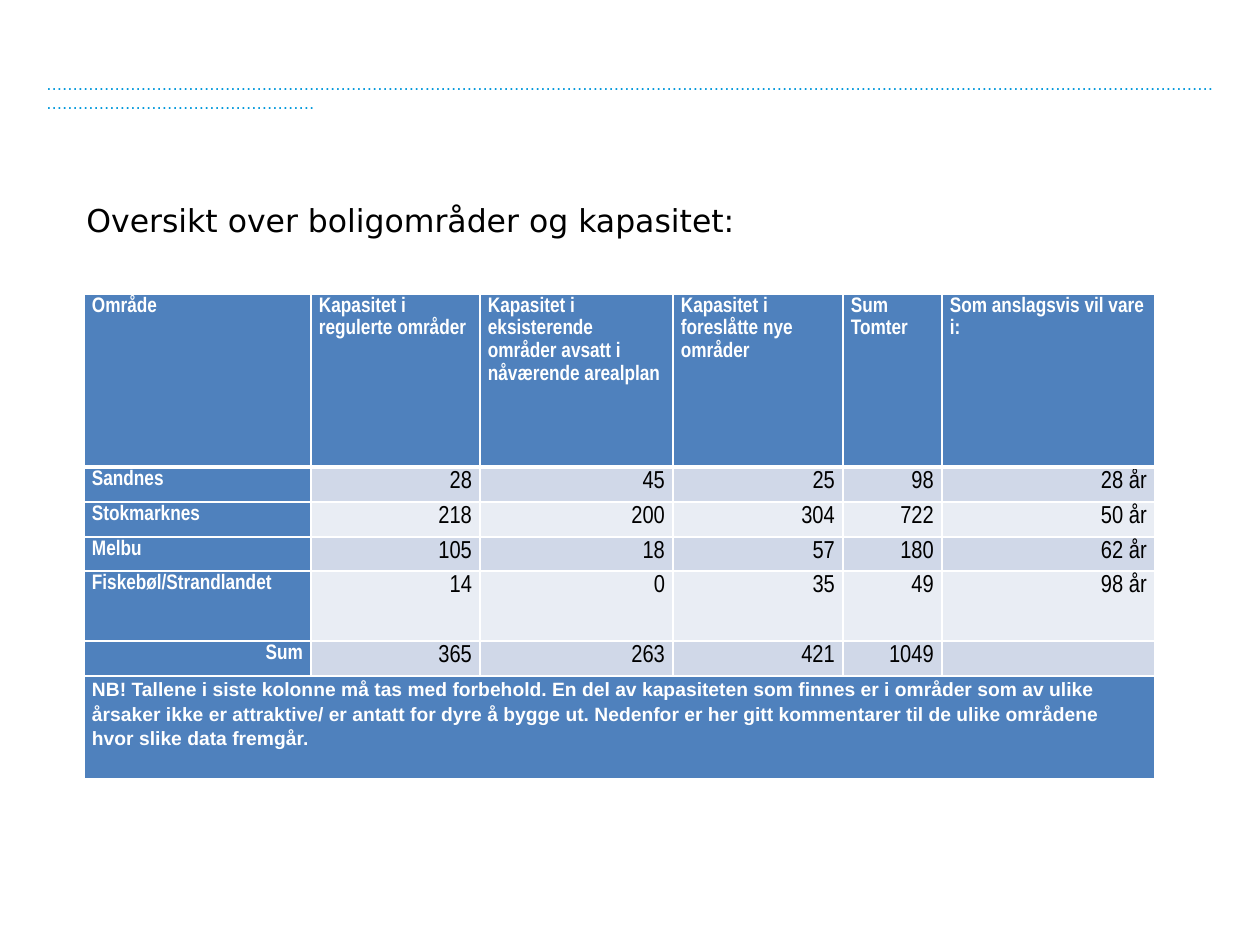
from lxml.etree import SubElement
from pptx import Presentation
from pptx.dml.color import RGBColor
from pptx.enum.text import MSO_ANCHOR, MSO_AUTO_SIZE, PP_ALIGN
from pptx.oxml.ns import qn
from pptx.util import Pt

SCALE = 914400 / 126
HEX = {"dots": "0098DB", "black": "000000", "white": "FFFFFF",
       "blue": "4F81BD", "dark": "D0D8E8", "light": "E9EDF4"}
COLS = [227, 169, 193, 170, 99, 213]
ROWS = [173, 35, 35, 34, 70, 35, 103]
DATA = [
    ["Område", "Kapasitet i regulerte områder",
     "Kapasitet i eksisterende områder avsatt i nåværende arealplan",
     "Kapasitet i foreslåtte nye områder", "Sum\nTomter",
     "Som anslagsvis vil vare i:"],
    ["Sandnes", "28", "45", "25", "98", "28 år"],
    ["Stokmarknes", "218", "200", "304", "722", "50 år"],
    ["Melbu", "105", "18", "57", "180", "62 år"],
    ["Fiskebøl/Strandlandet", "14", "0", "35", "49", "98 år"],
    ["Sum", "365", "263", "421", "1049", ""],
]
NOTE = ("NB! Tallene i siste kolonne må tas med forbehold. En del av kapasiteten "
        "som finnes er i områder som av ulike årsaker ikke er attraktive/ er antatt "
        "for dyre å bygge ut. Nedenfor er her gitt kommentarer til de ulike områdene "
        "hvor slike data fremgår.")


def px(num):
    return round(num * SCALE)


def color(name):
    return RGBColor.from_string(HEX[name])


def style(frame, size, face, tint, bold=False):
    for para in frame.paragraphs:
        for run in para.runs:
            font = run.font
            font.size, font.name, font.bold = Pt(size), face, bold
            font.color.rgb = color(tint)


def add_text(slide, box, text, size, tint, anchor):
    frame = slide.shapes.add_textbox(*map(px, box)).text_frame
    frame.word_wrap = True
    frame.auto_size = MSO_AUTO_SIZE.SHAPE_TO_FIT_TEXT
    frame.vertical_anchor = anchor
    frame.text = text
    style(frame, size, "DejaVu Sans", tint)


def add_edges(cell, top, bottom):
    props = cell._tc.get_or_add_tcPr()
    for side, width in zip("LRTB", (1, 1, top, bottom)):
        line = SubElement(props, qn("a:ln" + side), w=str(Pt(width)))
        fill = SubElement(line, qn("a:solidFill"))
        SubElement(fill, qn("a:srgbClr"), val=HEX["white"])


def fill_cell(cell, text, fill, size, face, tint, bold, align):
    cell.margin_left = cell.margin_right = px(8)
    cell.margin_top = cell.margin_bottom = 0
    cell.fill.solid()
    cell.fill.fore_color.rgb = color(fill)
    frame = cell.text_frame
    frame.text = text
    for para in frame.paragraphs:
        para.alignment = align
        para.line_spacing = 1.15
        if not text:
            SubElement(para._p, qn("a:endParaRPr"), sz=str(size * 100))
    style(frame, size, face, tint, bold)


def add_grid(slide, box):
    shape = slide.shapes.add_table(len(ROWS), len(COLS), *map(px, box))
    table = shape.table
    for col, width in zip(table.columns, COLS):
        col.width = px(width)
    for row, height in zip(table.rows, ROWS):
        row.height = px(height)
    last = len(ROWS) - 1
    for i in range(len(ROWS)):
        for j in range(len(COLS)):
            add_edges(table.cell(i, j), 3 if i == 1 else 1, 3 if i == 0 else 1)
    for i, row in enumerate(DATA):
        for j, text in enumerate(row):
            head = i == 0 or j == 0
            align = PP_ALIGN.LEFT if head and text != "Sum" else PP_ALIGN.RIGHT
            band = "dark" if i % 2 else "light"
            look = ("blue", 12, "Arial Narrow", "white") if head else (
                band, 14, "Arial Narrow", "black")
            fill_cell(table.cell(i, j), text, *look, head, align)
    note = table.cell(last, 0)
    note.merge(table.cell(last, len(COLS) - 1))
    fill_cell(note, NOTE, "blue", 11, "Arial", "white", True, PP_ALIGN.LEFT)


def main():
    deck = Presentation()
    deck.slide_width, deck.slide_height = px(1260), px(945)
    slide = deck.slides.add_slide(deck.slide_layouts[6])
    add_text(slide, (34, 69, 1201, 32), "…" * 91, 9, "dots", MSO_ANCHOR.TOP)
    add_text(slide, (74, 195, 1142, 50), "Oversikt over boligområder og kapasitet:",
             18, "black", MSO_ANCHOR.MIDDLE)
    add_grid(slide, (84, 294, sum(COLS), sum(ROWS)))
    deck.save("out.pptx")


if __name__ == "__main__":
    main()
